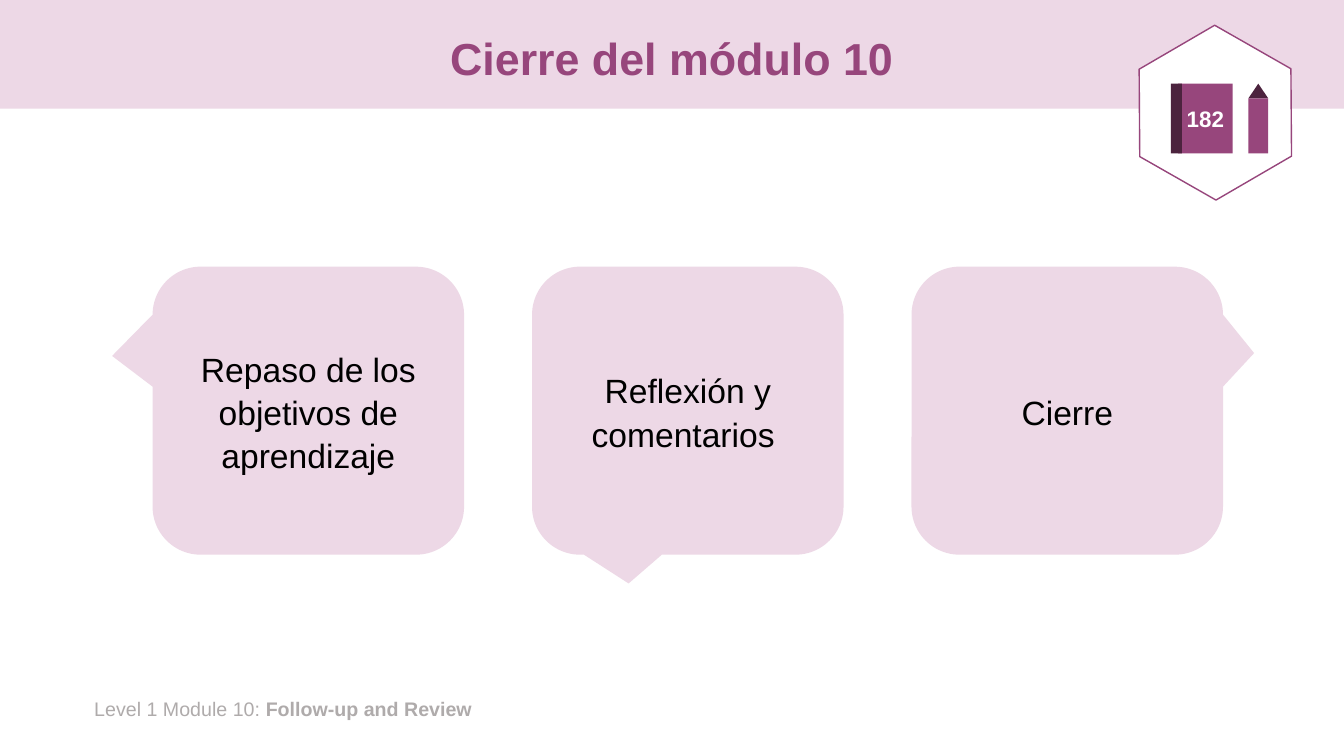
from pptx import Presentation
from pptx.dml.color import RGBColor
from pptx.enum.shapes import MSO_SHAPE
from pptx.enum.text import MSO_ANCHOR, PP_ALIGN
from pptx.util import Pt

HUES = {
    "pale": "EDD8E6",
    "plum": "97467C",
    "dark": "4C233E",
    "grey": "AFABAB",
    "white": "FFFFFF",
    "black": "000000",
}

# Text formats
TITLE = {"size": Pt(32), "bold": True, "hue": "plum"}
BODY = {"size": Pt(24), "bold": False, "hue": "black"}
PAGE = {"size": Pt(16), "bold": True, "hue": "white"}
FOOT = {"size": Pt(14), "bold": False, "hue": "grey"}

# Paragraph formats
TIGHT = {"alignment": PP_ALIGN.CENTER, "line_spacing": 0.9}
LOOSE = {"alignment": PP_ALIGN.CENTER, "line_spacing": 1.07, "space_after": Pt(8)}
MID = {"alignment": PP_ALIGN.CENTER}
LEFT = {"alignment": PP_ALIGN.LEFT}


def tint(hue):
    return RGBColor.from_string(HUES[hue])


def shape(slide, kind, box, hue, line=None):
    item = slide.shapes.add_shape(kind, *map(Pt, box))
    item.shadow.inherit = False
    item.fill.solid()
    item.fill.fore_color.rgb = tint(hue)
    if line:
        item.line.color.rgb = tint(line)
        item.line.width = Pt(1)
    else:
        item.line.fill.background()
    return item


def write(item, runs, para, anchor=MSO_ANCHOR.MIDDLE, wrap=True):
    frame = item.text_frame
    frame.word_wrap = wrap
    frame.vertical_anchor = anchor
    first = frame.paragraphs[0]
    for name, value in para.items():
        setattr(first, name, value)
    for text, form in runs:
        run = first.add_run()
        run.text = text
        run.font.name = "Arial"
        for name, value in form.items():
            if name == "hue":
                run.font.color.rgb = tint(value)
            else:
                setattr(run.font, name, value)


def header(slide, box):
    left, top, width, height = box
    shape(slide, MSO_SHAPE.RECTANGLE, box, "pale")
    area = (left + 66, top + 9.5, 828, height - 9.5)
    title = slide.shapes.add_textbox(*map(Pt, area))
    write(title, [("Cierre del módulo 10", TITLE)], TIGHT)


def footer(slide, box):
    note = slide.shapes.add_textbox(*map(Pt, box))
    runs = [("Level 1 Module 10: ", FOOT),
            ("Follow-up and Review", {**FOOT, "bold": True})]
    write(note, runs, LEFT, MSO_ANCHOR.TOP)


def bubbles(slide, box, topics):
    left, top, width, height = box
    wide = 222.5
    step = (width - wide) / (len(topics) - 1)
    for i, (text, tail) in enumerate(topics):
        area = (left + i * step, top, wide, height)
        bubble = shape(slide, MSO_SHAPE.ROUNDED_RECTANGULAR_CALLOUT, area, "pale")
        for j, value in enumerate((*tail, 0.167)):
            bubble.adjustments[j] = value
        write(bubble, [(text, BODY)], LOOSE)


def badge(slide, box, page):
    left, top, width, height = box
    # Hexagon frame
    frame = shape(slide, MSO_SHAPE.HEXAGON, box, "white", "plum")
    frame.rotation = 29.7
    frame.adjustments[0] = 0.29
    frame.adjustments[1] = 1.155
    # Book and its spine
    y, tall = top + 33.3, 49.8
    book = shape(slide, MSO_SHAPE.RECTANGLE, (left + 36, y, 39, tall), "plum")
    write(book, [(page, PAGE)], MID, wrap=False)
    shape(slide, MSO_SHAPE.RECTANGLE, (left + 30.9, y, 7.8, tall), "dark")
    # Pencil tip and shaft
    x, tip = left + 86.2, 10.5
    shape(slide, MSO_SHAPE.ISOSCELES_TRIANGLE, (x, y, 14.2, tip), "dark")
    shape(slide, MSO_SHAPE.RECTANGLE, (x, y + tip, 14.2, tall - tip), "plum")


def main():
    deck = Presentation()
    deck.slide_width, deck.slide_height = Pt(960), Pt(540)
    slide = deck.slides.add_slide(deck.slide_layouts[6])
    header(slide, (0, 0, 960, 77.6))
    footer(slide, (60.2, 494.6, 327.6, 24.5))
    bubbles(slide, (109, 190.5, 764.6, 205.7), [
        ("Repaso de los objetivos de aprendizaje", (-0.63, -0.19)),
        ("Reflexión y comentarios ", (-0.19, 0.6)),
        ("Cierre", (0.6, -0.2)),
    ])
    badge(slide, (805.5, 26.5, 125.3, 108), "182")
    deck.save("out.pptx")


if __name__ == "__main__":
    main()
